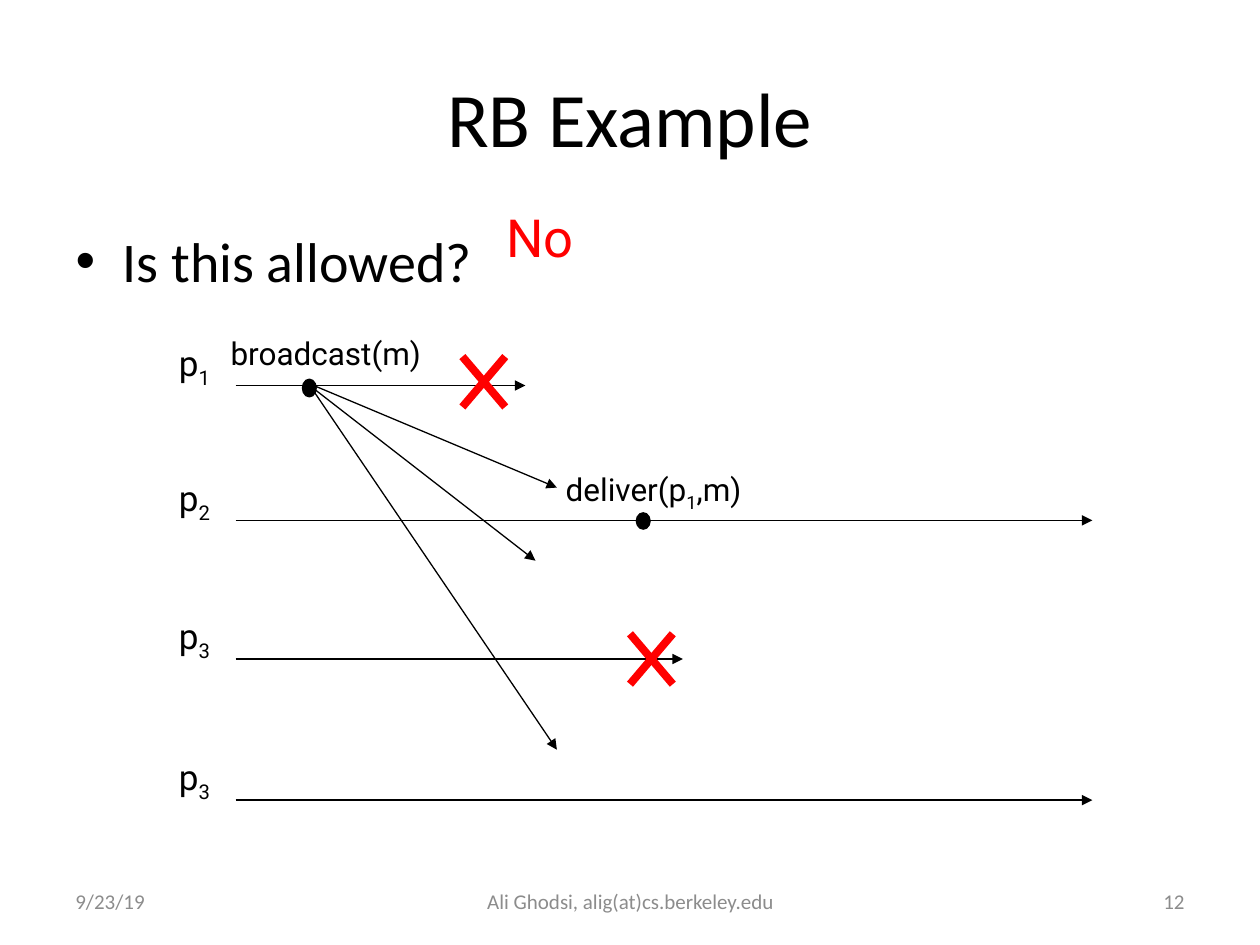
from lxml import etree
from pptx import Presentation
from pptx.dml.color import RGBColor
from pptx.enum import shapes, text
from pptx.oxml import ns
from pptx.util import Pt

PX = 9144  # EMU in one px, 100 px to the inch
COLORS = {"ink": "000000", "alert": "FF0000", "footer": "8C8C8C"}

TITLE = ("RB Example", (50, 30, 900, 125))
QUESTION = ("Is this allowed?", (50, 175, 900, 495))
ANSWER = ("No", (392, 158, 175, 60))
FOOTERS = [
    ("9/23/19", (50, 695, 233, 40), text.PP_ALIGN.LEFT),
    ("Ali Ghodsi, alig(at)cs.berkeley.edu", (342, 695, 317, 40), text.PP_ALIGN.CENTER),
    ("12", (717, 695, 233, 40), text.PP_ALIGN.RIGHT),
]
# Subscript of the process, height of its time line, end of its time line
PROCESSES = [("1", 306, 417), ("2", 413, 867), ("3", 523, 542), ("3", 635, 867)]
TIMELINE_LEFT, LABEL_LEFT, LABEL_RISE = 187, 142, 35
# Text parts alternate between normal and subscript
EVENT_LABELS = [
    (["broadcast(m)"], (183, 265, 160, 30)),
    (["deliver(p", "1", ",m)"], (449, 373, 176, 30)),
]
EVENT_DOTS = [(240, 301, 11, 14), (505, 407, 11, 13)]
MESSAGES = [((242, 303), (442, 387)), ((250, 312), (442, 595)), ((242, 303), (425, 445))]
CRASHES = [(500, 503), (367, 283)]
CRASH_WIDTH, CRASH_HEIGHT = 34, 40


def emu(lengths):
    return [length * PX for length in lengths]


def rgb(name):
    return RGBColor.from_string(COLORS[name])


def style_runs(paragraph, font, size, color):
    for run in paragraph.runs:
        run.font.name = font
        run.font.size = Pt(size)
        run.font.color.rgb = rgb(color)


def fill_placeholder(placeholder, content, box, size):
    placeholder.left, placeholder.top, placeholder.width, placeholder.height = emu(box)
    placeholder.text_frame.text = content
    style_runs(placeholder.text_frame.paragraphs[0], "Calibri", size, "ink")


def add_text(slide, parts, box, font, size, color, inset=True):
    """Add a text box in which every second part is a subscript."""
    frame = slide.shapes.add_textbox(*emu(box)).text_frame
    frame.word_wrap = True
    if not inset:
        frame.margin_left = frame.margin_top = frame.margin_right = frame.margin_bottom = 0
    paragraph = frame.paragraphs[0]
    for index, part in enumerate(parts):
        run = paragraph.add_run()
        run.text = part
        if index % 2:
            run._r.get_or_add_rPr().set("baseline", "-25000")
    style_runs(paragraph, font, size, color)
    return frame


def add_line(parent, start, end, color="ink", width=0.75, arrow=True):
    line = parent.shapes.add_connector(shapes.MSO_CONNECTOR.STRAIGHT, *emu(start + end))
    line.line.color.rgb = rgb(color)
    line.line.width = Pt(width)
    if arrow:
        etree.SubElement(line.line._get_or_add_ln(), ns.qn("a:tailEnd"), type="triangle")
    etree.SubElement(line._element.spPr, ns.qn("a:effectLst"))


def add_dot(slide, box):
    dot = slide.shapes.add_shape(shapes.MSO_SHAPE.OVAL, *emu(box))
    dot.shadow.inherit = False
    dot.fill.solid()
    dot.fill.fore_color.rgb = rgb("ink")
    dot.line.color.rgb = rgb("ink")
    dot.line.width = Pt(0.75)


def add_crash(slide, left, top):
    group = slide.shapes.add_group_shape()
    right, bottom = left + CRASH_WIDTH, top + CRASH_HEIGHT
    for start, end in [((left, top), (right, bottom)), ((right, top), (left, bottom))]:
        add_line(group, start, end, "alert", 4.5, arrow=False)


def main():
    presentation = Presentation()
    presentation.slide_width, presentation.slide_height = emu((1000, 750))
    slide = presentation.slides.add_slide(presentation.slide_layouts[1])

    fill_placeholder(slide.shapes.title, *TITLE, 44)
    fill_placeholder(slide.placeholders[1], *QUESTION, 32)
    for content, box, alignment in FOOTERS:
        frame = add_text(slide, [content], box, "Calibri", 12, "footer")
        frame.vertical_anchor = text.MSO_ANCHOR.MIDDLE
        frame.paragraphs[0].alignment = alignment

    for number, y, end in PROCESSES:
        add_line(slide, (TIMELINE_LEFT, y), (end, y))
        box = (LABEL_LEFT, y - LABEL_RISE, 57, 33)
        add_text(slide, ["p", number], box, "Roboto", 20, "ink", inset=False)
    for parts, box in EVENT_LABELS:
        add_text(slide, parts, box, "Roboto", 18, "ink", inset=False)
    for box in EVENT_DOTS:
        add_dot(slide, box)
    for start, end in MESSAGES:
        add_line(slide, start, end)
    for left, top in CRASHES:
        add_crash(slide, left, top)

    content, box = ANSWER
    add_text(slide, [content], box, "Roboto", 30, "alert")
    presentation.save("out.pptx")


if __name__ == "__main__":
    main()
